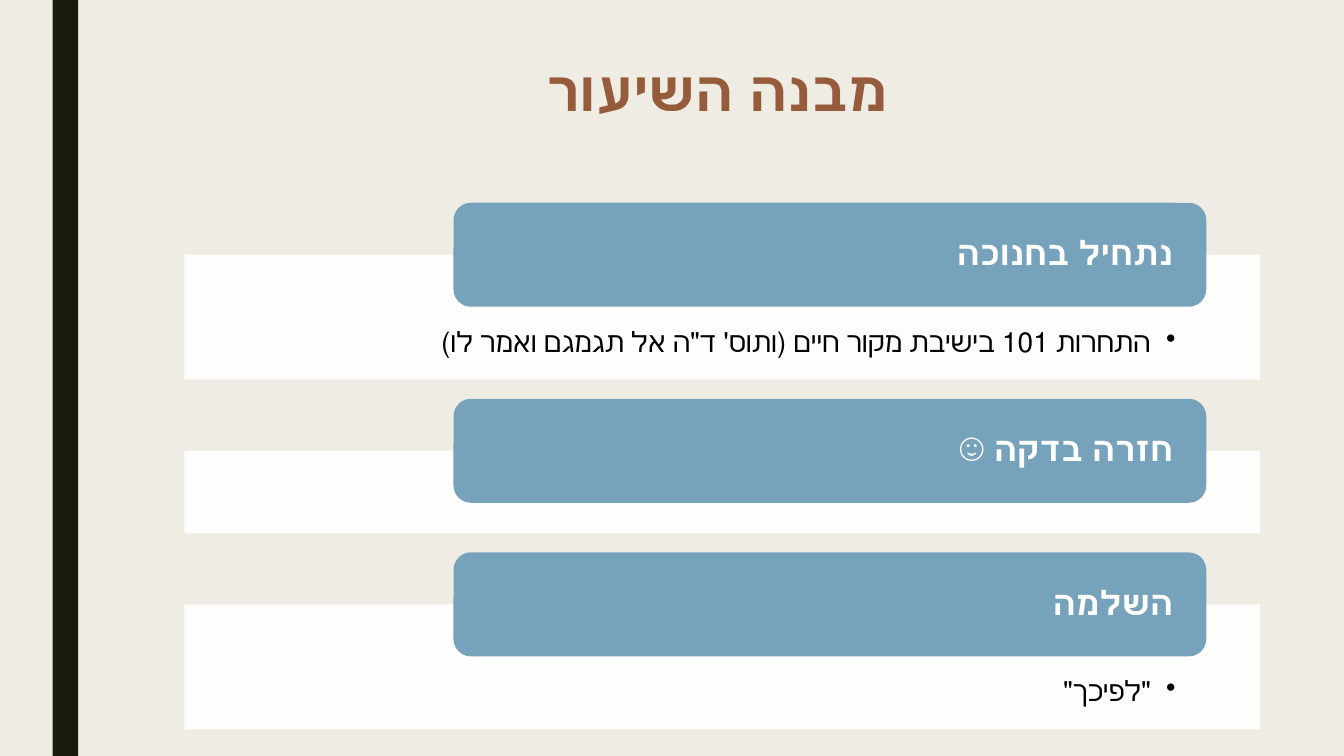
from dataclasses import dataclass

from lxml.etree import SubElement
from pptx import Presentation
from pptx.dml.color import RGBColor
from pptx.enum.lang import MSO_LANGUAGE_ID
from pptx.enum.shapes import MSO_SHAPE
from pptx.enum.text import MSO_ANCHOR, PP_ALIGN
from pptx.oxml.ns import qn
from pptx.shapes.autoshape import Shape
from pptx.slide import Slide
from pptx.util import Cm, Pt

FONT = "Roboto"
PANEL_LEFT, PANEL_WIDTH = 4.65, 27.1
HEADING_LEFT, HEADING_WIDTH, HEADING_HEIGHT = 11.43, 18.97, 2.62
FIRST_TOP, SECTION_GAP = 5.11, 0.48
BULLET_INDENT = Cm(0.64)


@dataclass(frozen=True)
class Section:
    heading: str
    detail: str
    panel_height: float


@dataclass(frozen=True)
class TextStyle:
    size: float
    color: str
    bold: bool
    align: PP_ALIGN
    anchor: MSO_ANCHOR
    insets: tuple[float, float, float, float]
    bullet: bool = False


TITLE = TextStyle(40, "955B3B", True, PP_ALIGN.CENTER, MSO_ANCHOR.TOP, (0.25, 0.13, 0.25, 0.13))
HEADING = TextStyle(24, "FFFFFF", True, PP_ALIGN.RIGHT, MSO_ANCHOR.MIDDLE, (0.71, 0, 0.71, 0))
DETAIL = TextStyle(20, "000000", False, PP_ALIGN.RIGHT, MSO_ANCHOR.TOP, (2.11, 1.85, 2.11, 0.41), True)

SECTIONS = [
    Section("נתחיל בחנוכה", "התחרות 101 בישיבת מקור חיים (ותוס' ד\"ה אל תגמגם ואמר לו)", 3.15),
    Section("חזרה בדקה ☺", "", 2.08),
    Section("השלמה", "\"לפיכך\"", 3.15),
]


def rgb(value: str) -> RGBColor:
    return RGBColor.from_string(value)


def add_block(page: Slide, kind: MSO_SHAPE, left: float, top: float,
              width: float, height: float, color: str) -> Shape:
    block = page.shapes.add_shape(kind, Cm(left), Cm(top), Cm(width), Cm(height))
    block.shadow.inherit = False
    block.fill.solid()
    block.fill.fore_color.rgb = rgb(color)
    block.line.fill.background()
    return block


def set_opacity(block: Shape, percent: int) -> None:
    color = block.fill._xPr.find(qn("a:solidFill"))[0]
    SubElement(color, qn("a:alpha"), val=str(percent * 1000))


def write_text(box: Shape, text: str, style: TextStyle) -> None:
    frame = box.text_frame
    left, top, right, bottom = map(Cm, style.insets)
    frame_format = {
        "word_wrap": True, "vertical_anchor": style.anchor,
        "margin_left": left, "margin_top": top,
        "margin_right": right, "margin_bottom": bottom,
    }
    for name, value in frame_format.items():
        setattr(frame, name, value)

    para = frame.paragraphs[0]
    para.alignment = style.align
    para.line_spacing = 0.9
    properties = para._p.get_or_add_pPr()
    properties.set("rtl", "1")
    if style.bullet:
        para.level = 1
        properties.set("marL", str(BULLET_INDENT))
        properties.set("indent", str(-BULLET_INDENT))
        SubElement(properties, qn("a:buChar"), char="•")

    span = para.add_run()
    span.text = text
    font_format = {
        "name": FONT, "size": Pt(style.size), "bold": style.bold,
        "language_id": MSO_LANGUAGE_ID.HEBREW,
    }
    for name, value in font_format.items():
        setattr(span.font, name, value)
    span.font.color.rgb = rgb(style.color)


def add_section(page: Slide, section: Section, top: float) -> float:
    panel_top = top + HEADING_HEIGHT / 2
    panel = add_block(page, MSO_SHAPE.RECTANGLE, PANEL_LEFT, panel_top,
                      PANEL_WIDTH, section.panel_height, "FFFFFF")
    set_opacity(panel, 90)
    if section.detail:
        write_text(panel, section.detail, DETAIL)
    heading = add_block(page, MSO_SHAPE.ROUNDED_RECTANGLE, HEADING_LEFT, top,
                        HEADING_WIDTH, HEADING_HEIGHT, "77A2BB")
    write_text(heading, section.heading, HEADING)
    return panel_top + section.panel_height + SECTION_GAP


def main() -> None:
    deck = Presentation()
    deck.slide_width, deck.slide_height = Cm(33.87), Cm(19.05)
    page = deck.slides.add_slide(deck.slide_layouts[6])
    page.background.fill.solid()
    page.background.fill.fore_color.rgb = rgb("EFEDE3")

    add_block(page, MSO_SHAPE.RECTANGLE, 1.33, 0, 0.64, 19.05, "191B0E")
    title = page.shapes.add_textbox(Cm(4.42), Cm(1.47), Cm(27.3), Cm(2.34))
    write_text(title, "מבנה השיעור", TITLE)

    top = FIRST_TOP
    for section in SECTIONS:
        top = add_section(page, section, top)

    deck.save("out.pptx")


if __name__ == "__main__":
    main()
